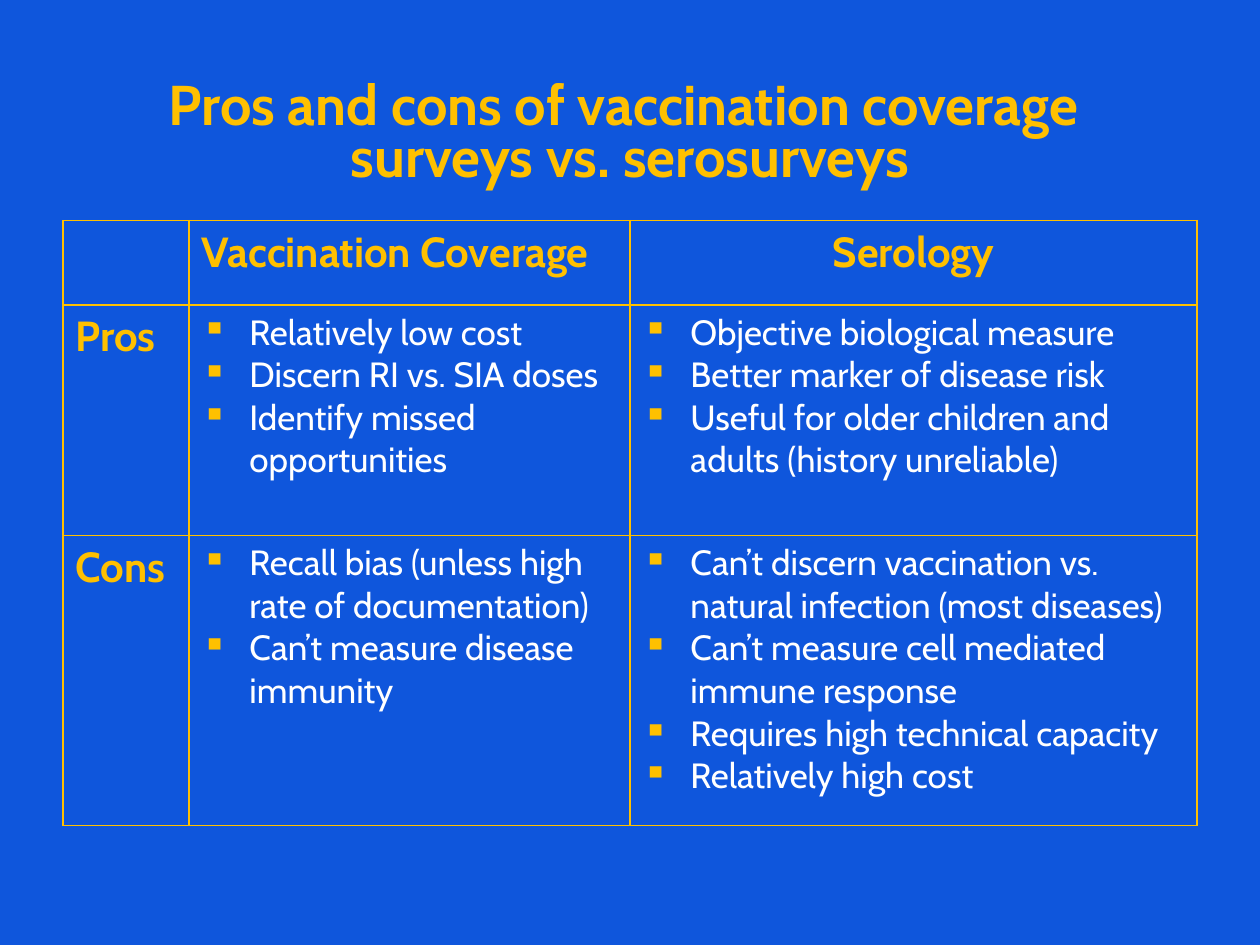
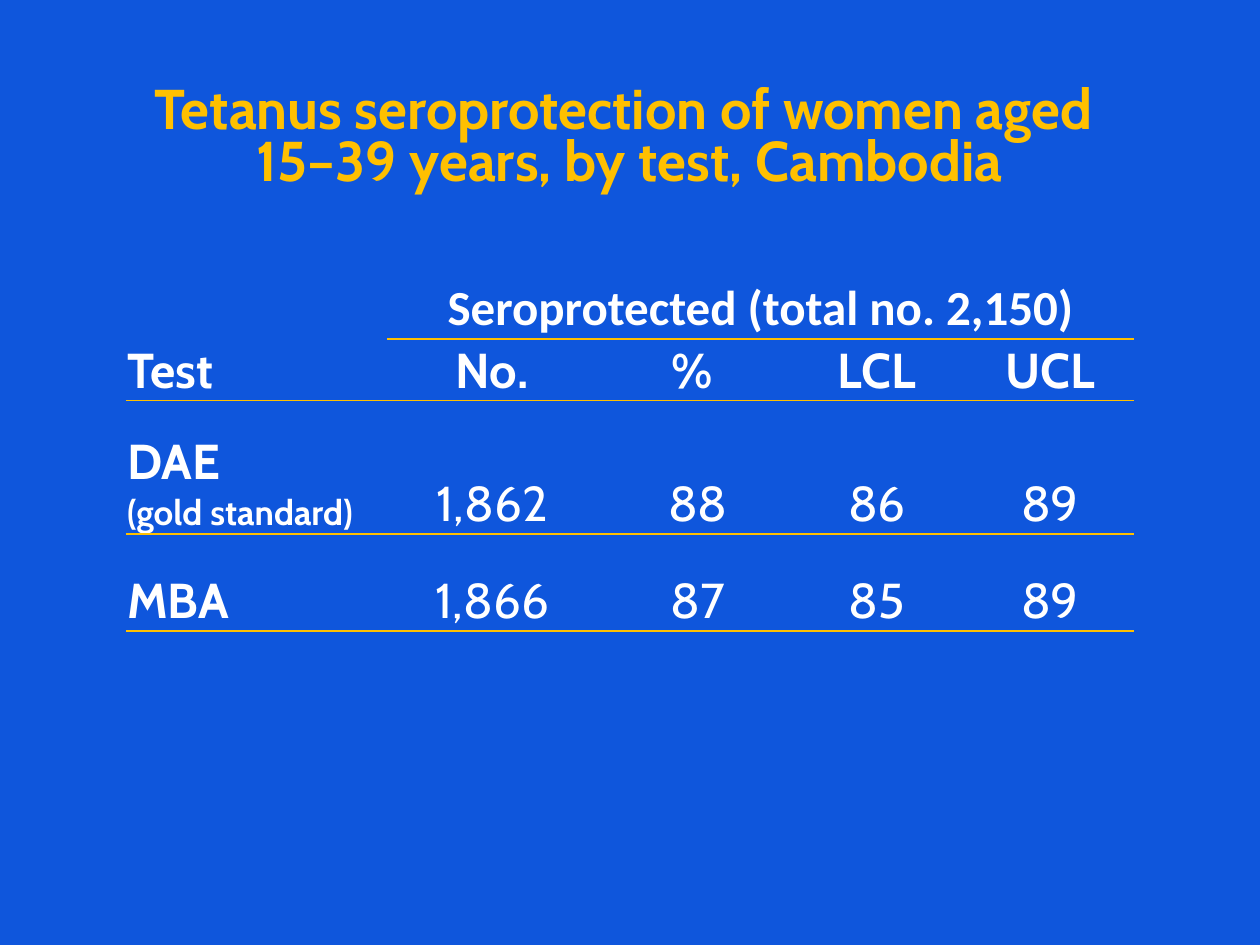
"""Build two slides comparing coverage surveys with serosurveys."""
import pptx
import pptx.dml.color
import pptx.enum.text
import pptx.oxml
import pptx.oxml.ns
import pptx.util

HUES = {"back": "0F56DC", "gold": "FFC000", "white": "FFFFFF"}
WIDE, HIGH = 10, 7.5
PLAIN = "{2D5ABB26-0587-4C30-8999-92F81FD0307C}"
ALIGN = pptx.enum.text.PP_ALIGN
ANCHOR = pptx.enum.text.MSO_ANCHOR
INCH, PT = pptx.util.Inches, pptx.util.Pt

TITLE = {"size": 32, "bold": True, "name": "Cabin", "hue": "gold"}
HEAD = {**TITLE, "size": 24}
ITEM = {**HEAD, "size": 20, "bold": False, "hue": "white"}
LABEL = {**TITLE, "size": 28, "hue": "white"}
SPAN = {**LABEL, "name": "Calibri"}
NOTE = {**LABEL, "size": 20}
VALUE = {**LABEL, "bold": False}

PROS = {
    "title": "Pros and cons of vaccination coverage \vsurveys vs. serosurveys",
    "top": 0.3,
    "box": (0.5, 1.75),
    "cols": [1, 3.5, 4.5],
    "rows": [0.67, 1.83, 2.3],
    "cells": [
        [[], ["Vaccination Coverage"], ["Serology"]],
        [["Pros"],
         ["Relatively low cost", "Discern RI vs. SIA doses",
          "Identify missed opportunities"],
         ["Objective biological measure", "Better marker of disease risk",
          "Useful for older children and adults (history unreliable)"]],
        [["Cons"],
         ["Recall bias (unless high rate of documentation)",
          "Can’t measure disease immunity"],
         ["Can’t discern vaccination vs. natural infection (most diseases)",
          "Can’t measure cell mediated immune response",
          "Requires high technical capacity", "Relatively high cost"]],
    ],
}
TESTS = {
    "title": "Tetanus seroprotection of women aged \v15–39 years, by test, Cambodia",
    "top": 0.33,
    "box": (1, 1.92),
    "cols": [2.07, 1.76, 1.42, 1.42, 1.33],
    "rows": [0.77, 0.49, 1.06, 0.77],
    "cells": [
        [[], ["Seroprotected (total no. 2,150)"], [], [], []],
        [["Test"], ["No. "], ["% "], ["LCL"], ["UCL"]],
        [["DAE", "(gold standard)"], ["1,862 "], ["88"], ["86"], ["89"]],
        [["MBA"], ["1,866 "], ["87"], ["85"], ["89"]],
    ],
}


def tint(hue):
    return pptx.dml.color.RGBColor.from_string(HUES[hue])


def style(font, form):
    vals = {**form, "size": PT(form["size"])}
    font.color.rgb = tint(vals.pop("hue"))
    for key, val in vals.items():
        setattr(font, key, val)


def xml(tag, attrs="", body=""):
    space = pptx.oxml.ns.nsdecls("a")
    return pptx.oxml.parse_xml(f"<a:{tag} {space} {attrs}>{body}</a:{tag}>")


def paint(hue):
    return f'<a:srgbClr val="{HUES[hue]}"/>'


def bullet(para):
    props = para._p.get_or_add_pPr()
    props.set("marL", str(INCH(0.38)))
    props.set("indent", str(-INCH(0.38)))
    props.append(xml("buClr", body=paint("gold")))
    props.append(xml("buChar", 'char="▪"'))


def write(cell, lines, look):
    frame = cell.text_frame
    for num, line in enumerate(lines):
        para = frame.paragraphs[0] if num == 0 else frame.add_paragraph()
        form, align, mark = look(num)
        if mark:
            bullet(para)
        para.alignment = align
        run = para.add_run()
        run.text = line
        style(run.font, form)


def rule(cell, sides):
    props = cell._tc.get_or_add_tcPr()
    for side in "LRTB":
        if side in sides:
            props.append(xml(f"ln{side}", f'w="{PT(1)}"',
                             f"<a:solidFill>{paint('gold')}</a:solidFill>"))
    cell.fill.background()


def start(deck, data):
    slide = deck.slides.add_slide(deck.slide_layouts[5])
    title = slide.shapes.title
    place = {"left": 0.05 * WIDE, "top": data["top"], "width": 0.9 * WIDE, "height": 1.25}
    for key, val in place.items():
        setattr(title, key, INCH(val))
    frame = title.text_frame
    frame.text = data["title"]
    frame.auto_size = pptx.enum.text.MSO_AUTO_SIZE.NONE
    frame.vertical_anchor = ANCHOR.BOTTOM
    para = frame.paragraphs[0]
    para.alignment, para.line_spacing = ALIGN.CENTER, PT(30)
    for run in para.runs:
        style(run.font, TITLE)
    return slide


def grid(slide, data, look, sides, form):
    cols, rows = data["cols"], data["rows"]
    size = [INCH(val) for val in (*data["box"], sum(cols), sum(rows))]
    table = slide.shapes.add_table(len(rows), len(cols), *size).table
    table.first_row = table.horz_banding = False
    table._tbl.tblPr.find(pptx.oxml.ns.qn("a:tableStyleId")).text = PLAIN
    for col, wide in zip(table.columns, cols):
        col.width = INCH(wide)
    for row, high in zip(table.rows, rows):
        row.height = INCH(high)
    for r, line in enumerate(data["cells"]):
        for c, words in enumerate(line):
            cell = table.cell(r, c)
            for key, val in form.items():
                setattr(cell, key, val)
            write(cell, words, lambda num: look(r, c, num))
            rule(cell, sides(r, c))
    return table


def pros_look(r, c, num):
    if r and c:
        return ITEM, ALIGN.LEFT, True
    return HEAD, ALIGN.CENTER if c == 2 else ALIGN.LEFT, False


def tests_look(r, c, num):
    if c == 0:
        return NOTE if num else LABEL, ALIGN.LEFT, False
    return (SPAN, LABEL, VALUE, VALUE)[r], ALIGN.CENTER, False


def tests_sides(r, c):
    if r == 0:
        return "B" if c else ""
    if r == 1:
        return "TB" if c else "B"
    return "T" if r == 2 else "B"


def main():
    deck = pptx.Presentation()
    deck.slide_width, deck.slide_height = INCH(WIDE), INCH(HIGH)
    fill = deck.slide_master.background.fill
    fill.solid()
    fill.fore_color.rgb = tint("back")

    grid(start(deck, PROS), PROS, pros_look, lambda r, c: "LRTB", {})
    thin = INCH(0.01)
    tight = {"margin_left": thin, "margin_right": thin, "margin_top": thin,
             "margin_bottom": 0, "vertical_anchor": ANCHOR.BOTTOM}
    table = grid(start(deck, TESTS), TESTS, tests_look, tests_sides, tight)
    table.cell(0, 1).merge(table.cell(0, 4))
    deck.save("out.pptx")


if __name__ == "__main__":
    main()
